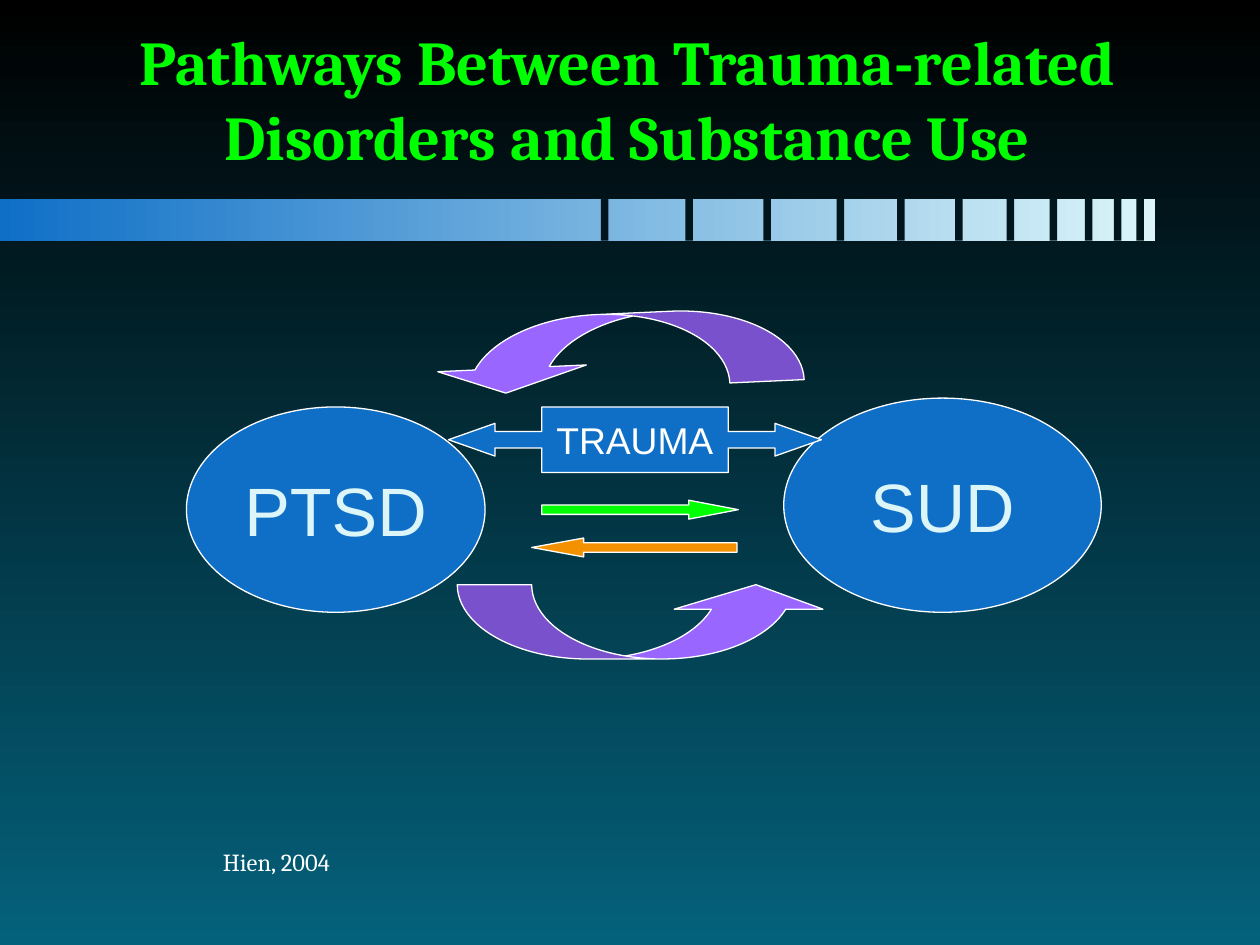
from pptx import Presentation
from pptx.dml.color import RGBColor
from pptx.enum import shapes, text
from pptx.util import Inches, Pt

BLACK = RGBColor(0x00, 0x00, 0x00)
TEAL = RGBColor(0x04, 0x61, 0x7B)
NIGHT = RGBColor(0x01, 0x16, 0x1C)
BLUE = RGBColor(0x0F, 0x6F, 0xC6)
ICE = RGBColor(0xDB, 0xF5, 0xF9)
WHITE = RGBColor(0xFF, 0xFF, 0xFF)
GREEN = RGBColor(0x00, 0xFF, 0x00)
ORANGE = RGBColor(0xF4, 0x91, 0x00)
PURPLE = RGBColor(0x99, 0x66, 0xFF)
KIND = shapes.MSO_SHAPE

# Content
TITLE = "Pathways Between Trauma-related Disorders and Substance Use"
SOURCE = "Hien, 2004"
BAR_TOP, BAR_WIDTH, BAR_HEIGHT = 1.58, 9.17, 0.33
GAP_WIDTH = 0.06
GAPS = [4.77, 5.44, 6.06, 6.64, 7.12, 7.58, 7.99, 8.33, 8.61, 8.84, 9.02]
LABELLED = [  # kind, place, adjustments, label, size, colour
    (KIND.OVAL, (1.48, 3.23, 2.37, 1.63), (), "PTSD", 39.1, ICE),
    (KIND.OVAL, (6.22, 3.16, 2.52, 1.7), (), "SUD", 39.1, ICE),
    (KIND.LEFT_RIGHT_ARROW_CALLOUT, (3.56, 3.23, 2.96, 0.52),
     (0.25, 0.25, 0.71, 0.5), "TRAUMA", 21.3, WHITE),
]
ARROWS = [  # kind, place, adjustments, fill, rotation
    (KIND.RIGHT_ARROW, (4.3, 3.97, 1.56, 0.15), (0.5, 2.62), GREEN, 0),
    (KIND.LEFT_ARROW, (4.22, 4.27, 1.63, 0.15), (0.5, 2.75), ORANGE, 0),
    (KIND.CURVED_UP_ARROW, (3.63, 4.64, 2.96, 0.59), (1, 2, 0.33), PURPLE, 0),
    (KIND.CURVED_UP_ARROW, (3.41, 2.49, 2.96, 0.59), (1, 2, 0.33), PURPLE, 177.4),
]


def set_gradient(fill, start, end, angle):
    fill.gradient()
    fill.gradient_angle = angle
    for stop, color in zip(fill.gradient_stops, (start, end)):
        stop.color.rgb = color


def write(box, words, *, size, color, font="Arial", bold=False,
          align=text.PP_ALIGN.CENTER, anchor=text.MSO_ANCHOR.MIDDLE, wrap=True):
    frame = box.text_frame
    frame.auto_size = text.MSO_AUTO_SIZE.NONE
    frame.word_wrap = wrap
    frame.vertical_anchor = anchor
    para = frame.paragraphs[0]
    para.alignment = align
    span = para.add_run()
    span.text = words
    span.font.name, span.font.size, span.font.bold = font, Pt(size), bold
    span.font.color.rgb = color


def add_shape(page, kind, place, fill=None, line=None, adjustments=()):
    shape = page.shapes.add_shape(kind, *map(Inches, place))
    shape.shadow.inherit = False
    for index, value in enumerate(adjustments):
        shape.adjustments[index] = value
    if fill is not None:
        shape.fill.solid()
        shape.fill.fore_color.rgb = fill
    if line is None:
        shape.line.fill.background()
    else:
        shape.line.color.rgb = line
        shape.line.width = Pt(0.75)
    return shape


def main():
    deck = Presentation()
    deck.slide_width, deck.slide_height = Inches(10), Inches(7.5)
    page = deck.slides.add_slide(deck.slide_layouts[5])
    set_gradient(page.background.fill, BLACK, TEAL, 270)

    # Divider bar, cut into ever shorter blocks
    bar = add_shape(page, KIND.RECTANGLE, (0, BAR_TOP, BAR_WIDTH, BAR_HEIGHT))
    set_gradient(bar.fill, BLUE, ICE, 0)
    for left in GAPS:
        add_shape(page, KIND.RECTANGLE, (left, BAR_TOP, GAP_WIDTH, BAR_HEIGHT), NIGHT)

    # Title
    title = page.shapes.title
    title.left, title.top, title.width, title.height = map(
        Inches, (0.74, 0.19, 8.48, 1.23))
    write(title, TITLE, size=35.6, color=GREEN, font="Cambria", bold=True,
          anchor=text.MSO_ANCHOR.BOTTOM)

    # Disorders, trauma and the pathways between them
    for kind, place, adjustments, label, size, color in LABELLED:
        shape = add_shape(page, kind, place, BLUE, WHITE, adjustments)
        write(shape, label, size=size, color=color, wrap=False)
    for kind, place, adjustments, fill, rotation in ARROWS:
        arrow = add_shape(page, kind, place, fill, WHITE, adjustments)
        arrow.rotation = rotation

    # Source
    box = page.shapes.add_textbox(*map(Inches, (1.67, 6.67, 2.75, 0.34)))
    write(box, SOURCE, size=14, color=WHITE, font="Cambria",
          align=text.PP_ALIGN.LEFT, anchor=text.MSO_ANCHOR.TOP)

    deck.save("out.pptx")


if __name__ == "__main__":
    main()
